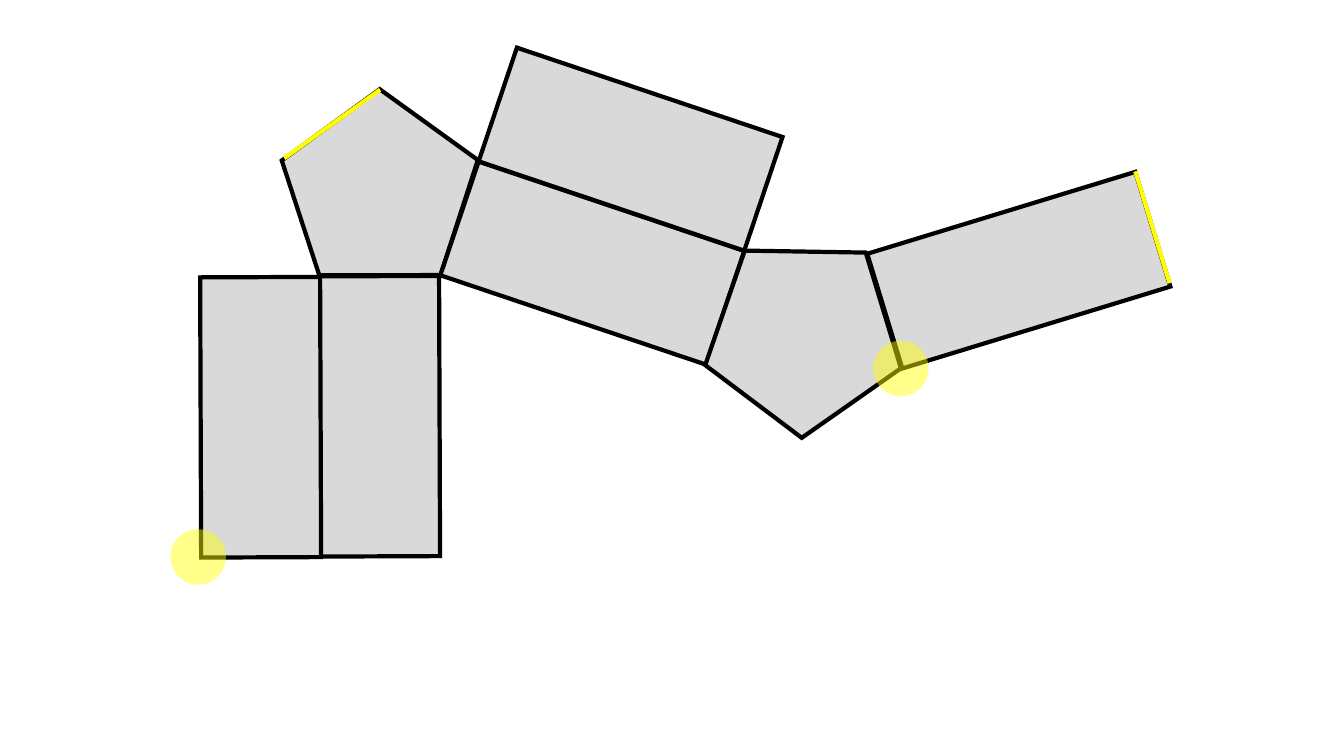
"""Build a slide with the net of a pentagonal prism."""
from dataclasses import dataclass

from lxml import etree
from pptx import Presentation
from pptx import util as u
from pptx.dml.color import RGBColor
from pptx.enum import shapes
from pptx.oxml.ns import qn


@dataclass(frozen=True)
class Theme:
    """Colours and line weight of the net."""
    face: str = "D9D9D9"
    edge: str = "000000"
    mark: str = "FFFF00"
    weight: float = 3
    mark_alpha: int = 46


class NetSlide:
    """Draw faces and marks on one slide in one style."""

    def __init__(self, slide, theme):
        """Keep the slide and theme and open a group for the net."""
        self.s = slide
        self.theme = theme
        self.net = slide.shapes.add_group_shape()

    def fill(self, sp, colour):
        """Give a shape a solid fill and no shadow."""
        sp.shadow.inherit = False
        sp.fill.solid()
        sp.fill.fore_color.rgb = RGBColor.from_string(colour)

    def stroke(self, line, colour):
        """Give a line its colour, weight and sharp corners."""
        line.color.rgb = RGBColor.from_string(colour)
        line.width = u.Pt(self.theme.weight)
        ln = line._get_or_add_ln()
        etree.SubElement(ln, qn("a:miter"), lim="800000")

    def face(self, kind, left, top, size, rotation):
        """Add one face of the prism to the net."""
        sp = self.net.shapes.add_shape(
            kind, *map(u.Inches, (left, top, *size)))
        sp.rotation = rotation
        self.fill(sp, self.theme.face)
        self.stroke(sp.line, self.theme.edge)

    def corner(self, left, top, size=0.55):
        """Mark a corner with a translucent disc."""
        sp = self.s.shapes.add_shape(
            shapes.MSO_SHAPE.OVAL, *map(u.Inches, (left, top, size, size)))
        self.fill(sp, self.theme.mark)
        sp.line.fill.background()
        colour = sp._element.spPr.find(qn("a:solidFill"))[0]
        etree.SubElement(colour, qn("a:alpha"),
                         val=str(self.theme.mark_alpha * 1000))

    def edge(self, *ends):
        """Mark an edge with a coloured line."""
        line = self.s.shapes.add_connector(
            shapes.MSO_CONNECTOR.STRAIGHT, *map(u.Inches, ends))
        self.stroke(line.line, self.theme.mark)
        etree.SubElement(line._element.spPr, qn("a:effectLst"))


def main():
    """Draw the net and save the presentation."""
    prs = Presentation()
    prs.slide_width, prs.slide_height = u.Inches(13.33), u.Inches(7.5)
    net = NetSlide(prs.slides.add_slide(prs.slide_layouts[6]), Theme())

    pentagon = shapes.MSO_SHAPE.REGULAR_PENTAGON
    side = shapes.MSO_SHAPE.RECTANGLE
    sizes = {pentagon: (1.94, 1.85), side: (1.19, 2.78)}
    faces = [
        (pentagon, 2.89, 0.95, 71.9),
        (side, 3.17, 2.74, 359.8),
        (side, 1.99, 2.75, 359.8),
        (side, 5.28, 1.22, 288.6),
        (side, 5.66, 0.09, 288.6),
        (pentagon, 7.06, 2.32, 37),
        (side, 9.51, 1.29, 253),
    ]
    for kind, left, top, rotation in faces:
        net.face(kind, left, top, sizes[kind], rotation)

    for left, top in [(1.69, 5.25), (8.66, 3.38)]:
        net.corner(left, top)
    for ends in [(11.6, 2.81, 11.26, 1.7), (3.77, 0.89, 2.82, 1.57)]:
        net.edge(*ends)

    prs.save("out.pptx")


if __name__ == "__main__":
    main()
